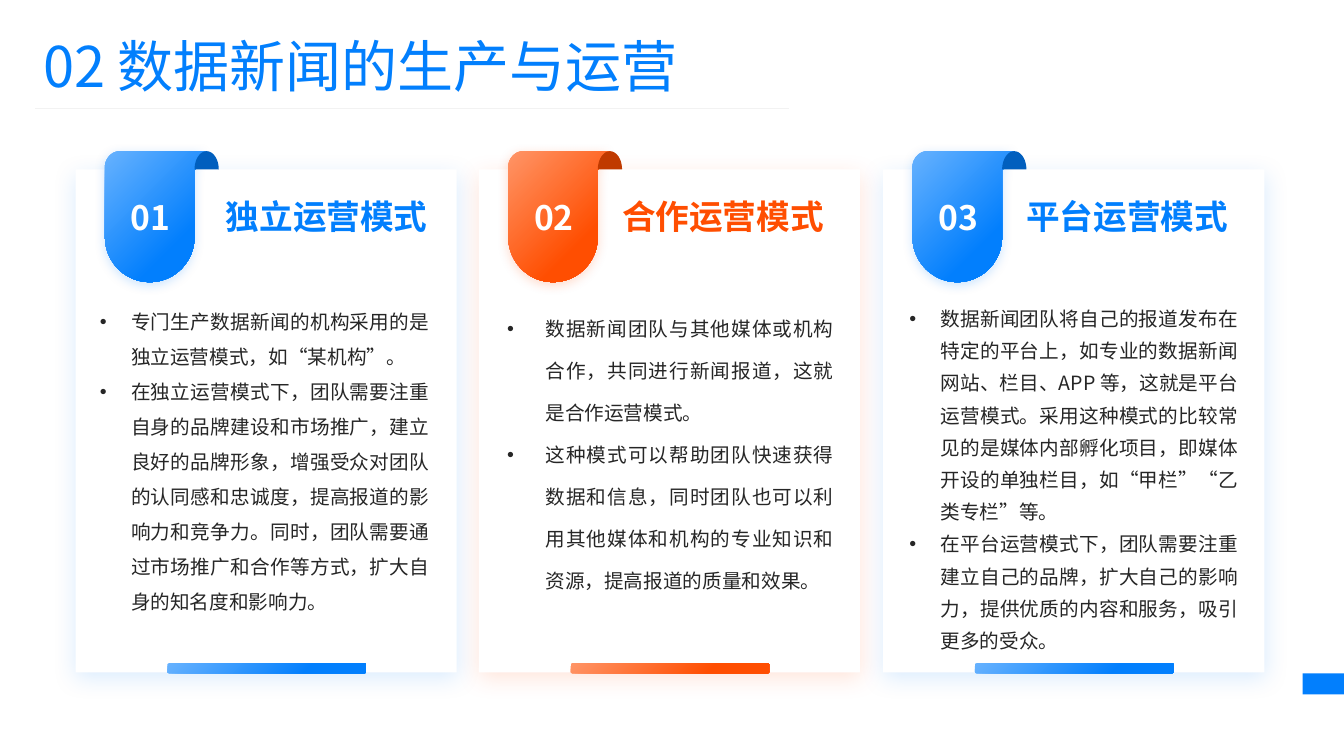
from math import cos, radians, sin

from lxml.etree import SubElement
from pptx import Presentation
from pptx.dml.color import RGBColor
from pptx.enum.shapes import MSO_CONNECTOR, MSO_SHAPE
from pptx.enum.text import MSO_ANCHOR, MSO_AUTO_SIZE, PP_ALIGN
from pptx.oxml.ns import qn
from pptx.util import Pt

EMU_PER_PX = 9144  # 100 px to the inch
FONT = "Noto Sans CJK SC"
WHITE, INK, RULE = "FFFFFF", "262626", "F2F2F2"
BLUE = {"main": "027FFD", "light": "67B2FE", "dark": "015FBE"}
ORANGE = {"main": "FF4E01", "light": "FF9567", "dark": "C03A00"}

# number, heading, palette, heading left/width, body left/width, indent, line spacing, paragraphs
MODES = [
    ("01", "独立运营模式", BLUE, (224, 229), (99, 327), 31, 25, [
        "专门生产数据新闻的机构采用的是独立运营模式，如“某机构”。",
        "在独立运营模式下，团队需要注重自身的品牌建设和市场推广，建立良好的品牌形象，"
        "增强受众对团队的认同感和忠诚度，提高报道的影响力和竞争力。同时，团队需要通过"
        "市场推广和合作等方式，扩大自身的知名度和影响力。"]),
    ("02", "合作运营模式", ORANGE, (617, 258), (503, 324), 38, 30, [
        "数据新闻团队与其他媒体或机构合作，共同进行新闻报道，这就是合作运营模式。",
        "这种模式可以帮助团队快速获得数据和信息，同时团队也可以利用其他媒体和机构的"
        "专业知识和资源，提高报道的质量和效果。"]),
    ("03", "平台运营模式", BLUE, (1018, 244), (902, 326), 31, 23, [
        "数据新闻团队将自己的报道发布在特定的平台上，如专业的数据新闻网站、栏目、APP 等，"
        "这就是平台运营模式。采用这种模式的比较常见的是媒体内部孵化项目，即媒体开设的"
        "单独栏目，如“甲栏”“乙类专栏”等。",
        "在平台运营模式下，团队需要注重建立自己的品牌，扩大自己的影响力，提供优质的内容"
        "和服务，吸引更多的受众。"]),
]


def px(length):
    return round(length * EMU_PER_PX)


def color(value):
    return RGBColor.from_string(value)


def arc(center, radii, start, end, steps=24):
    """Points along an ellipse, in degrees clockwise from the right."""
    angles = [radians(start + (end - start) * step / steps) for step in range(steps + 1)]
    return [(center[0] + radii[0] * cos(angle), center[1] + radii[1] * sin(angle))
            for angle in angles]


def write_text(frame, paragraphs, size, fill, bold=False, align=PP_ALIGN.LEFT,
               margins=(0, 0, 0, 0), anchor=MSO_ANCHOR.TOP, wrap=True,
               indent=0, line_spacing=None):
    """Fill a text frame; an indent makes the paragraphs a bulleted list."""
    frame.word_wrap = wrap
    frame.vertical_anchor = anchor
    (frame.margin_left, frame.margin_top,
     frame.margin_right, frame.margin_bottom) = map(px, margins)
    for index, text in enumerate(paragraphs):
        paragraph = frame.add_paragraph() if index else frame.paragraphs[0]
        paragraph.alignment = align
        if line_spacing:
            paragraph.line_spacing = Pt(line_spacing)
        if indent:
            properties = paragraph._p.get_or_add_pPr()
            properties.set("marL", str(px(indent)))
            properties.set("indent", str(-px(indent)))
            SubElement(properties, qn("a:buFont"), typeface="Arial")
            SubElement(properties, qn("a:buChar"), char="•")
        run = paragraph.add_run()
        run.text = text
        font = run.font
        font.name, font.size, font.bold = FONT, Pt(size), bold
        font.color.rgb = color(fill)
        SubElement(run._r.get_or_add_rPr(), qn("a:ea"), typeface=FONT)


class SlideBuilder:
    def __init__(self, presentation):
        self.slide = presentation.slides.add_slide(presentation.slide_layouts[6])
        self.shapes = self.slide.shapes

    def paint(self, shape, fill, opacity=100, shadow=None):
        """Fill with a colour or a palette gradient; shadow is colour, opacity, blur, distance."""
        shape.line.fill.background()
        shape.shadow.inherit = False
        if isinstance(fill, dict):
            shape.fill.gradient()
            shape.fill.gradient_angle = 315
            stops = zip(shape.fill.gradient_stops, (0, 0.71), (fill["light"], fill["main"]))
            for stop, position, value in stops:
                stop.position = position
                stop.color.rgb = color(value)
        else:
            shape.fill.solid()
            shape.fill.fore_color.rgb = color(fill)
        if opacity < 100:
            tint = shape._element.spPr.find(".//" + qn("a:srgbClr"))
            SubElement(tint, qn("a:alpha"), val=str(opacity * 1000))
        if shadow:
            value, strength, blur, distance = shadow
            effects = shape._element.spPr.find(qn("a:effectLst"))
            outer = SubElement(effects, qn("a:outerShdw"), blurRad=str(Pt(blur)),
                               dist=str(Pt(distance)), dir="5400000", rotWithShape="0")
            tint = SubElement(outer, qn("a:srgbClr"), val=value)
            SubElement(tint, qn("a:alpha"), val=str(strength * 1000))
        return shape

    def box(self, left, top, width, height, fill, kind=MSO_SHAPE.RECTANGLE, **style):
        shape = self.shapes.add_shape(kind, px(left), px(top), px(width), px(height))
        return self.paint(shape, fill, **style)

    def outline(self, points, fill, **style):
        vertices = [(px(x), px(y)) for x, y in points]
        builder = self.shapes.build_freeform(*vertices[0])
        builder.add_line_segments(vertices[1:], close=True)
        return self.paint(builder.convert_to_shape(), fill, **style)

    def text(self, left, top, width, height, paragraphs, **style):
        shape = self.shapes.add_textbox(px(left), px(top), px(width), px(height))
        write_text(shape.text_frame, paragraphs, **style)
        return shape

    def line(self, left, top, right, bottom, fill, width):
        connector = self.shapes.add_connector(
            MSO_CONNECTOR.STRAIGHT, px(left), px(top), px(right), px(bottom))
        connector.line.color.rgb = color(fill)
        connector.line.width = Pt(width)
        SubElement(connector._element.spPr, qn("a:effectLst"))

    def ribbon(self, left, top, number, palette):
        """Numbered hanging ribbon with its end folded over at the right."""
        fold = (left + 101, top + 18)
        body = (arc((left + 15, top + 16), (15, 16), 180, 270)
                + arc(fold, (11, 18), 270, 180)
                + [(left + 89, top + 18)]
                + arc((left + 44.5, top + 85), (44.5, 45), 0, 180))
        shape = self.outline(body, palette, shadow=(palette["main"], 20, 8, 2))
        write_text(shape.text_frame, [number], size=24, fill=WHITE, bold=True,
                   align=PP_ALIGN.CENTER, margins=(10, 5, 20, 5),
                   anchor=MSO_ANCHOR.MIDDLE, wrap=False)
        self.outline(arc(fold, (12, 18), 180, 360), palette["dark"])

    def mode_card(self, left, mode):
        number, heading, palette, heading_span, body_span, indent, spacing, paragraphs = mode
        card = (left, 168, 378, 499)
        self.box(*card, WHITE, shadow=(palette["main"], 15, 17, 4))
        self.box(*card, WHITE, opacity=20)
        self.box(left + 91, 658, 197, 10, palette, kind=MSO_SHAPE.ROUNDED_RECTANGLE)
        self.text(body_span[0], 296, body_span[1], 323, paragraphs, size=14, fill=INK,
                  align=PP_ALIGN.JUSTIFY, indent=indent, line_spacing=spacing)
        self.ribbon(left + 29, 150, number, palette)
        self.text(heading_span[0], 194, heading_span[1], 85, [heading],
                  size=24, fill=palette["main"], bold=True)


def main():
    presentation = Presentation()
    presentation.slide_width, presentation.slide_height = px(1333), px(750)
    builder = SlideBuilder(presentation)
    builder.box(1292, 668, 41, 21, BLUE["main"])
    title = builder.text(33, 26, 768, 77, ["02 数据新闻的生产与运营"], size=40,
                         fill=BLUE["main"], margins=(10, 5, 10, 5))
    title.text_frame.auto_size = MSO_AUTO_SIZE.SHAPE_TO_FIT_TEXT
    builder.line(35, 108, 783, 108, RULE, 0.5)
    for index, mode in enumerate(MODES):
        builder.mode_card(round(75 + 400.4 * index), mode)
    presentation.save("out.pptx")


if __name__ == "__main__":
    main()
